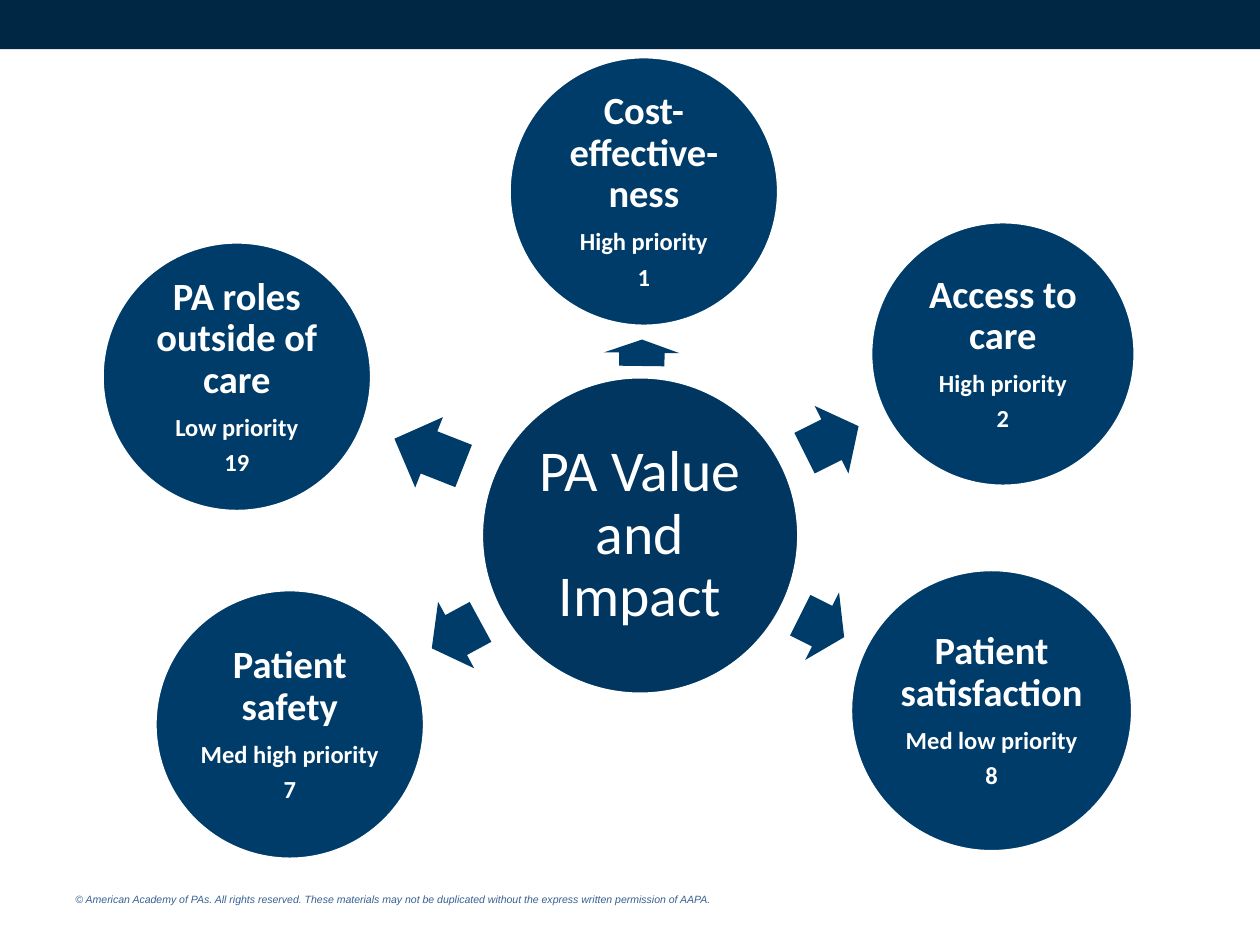
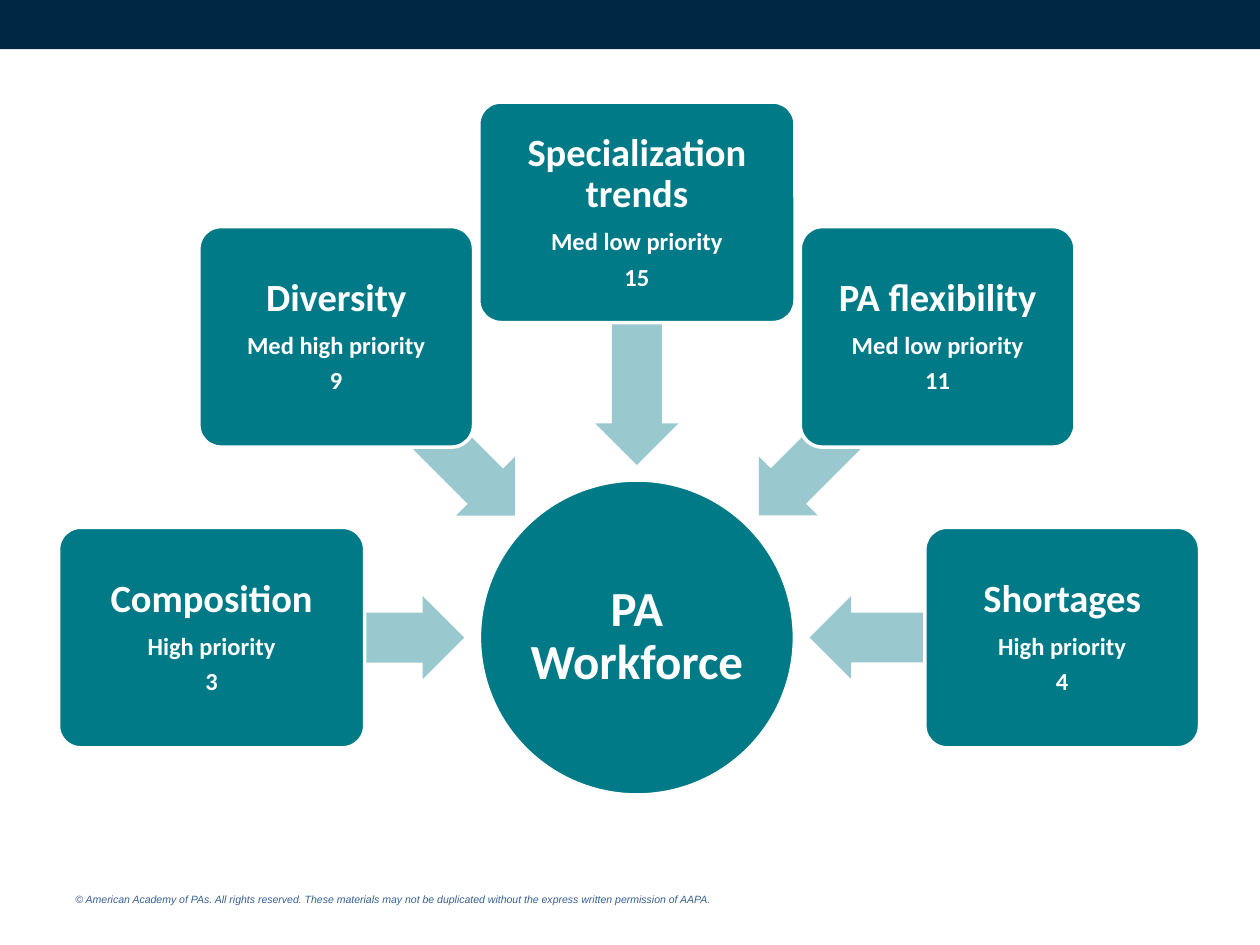
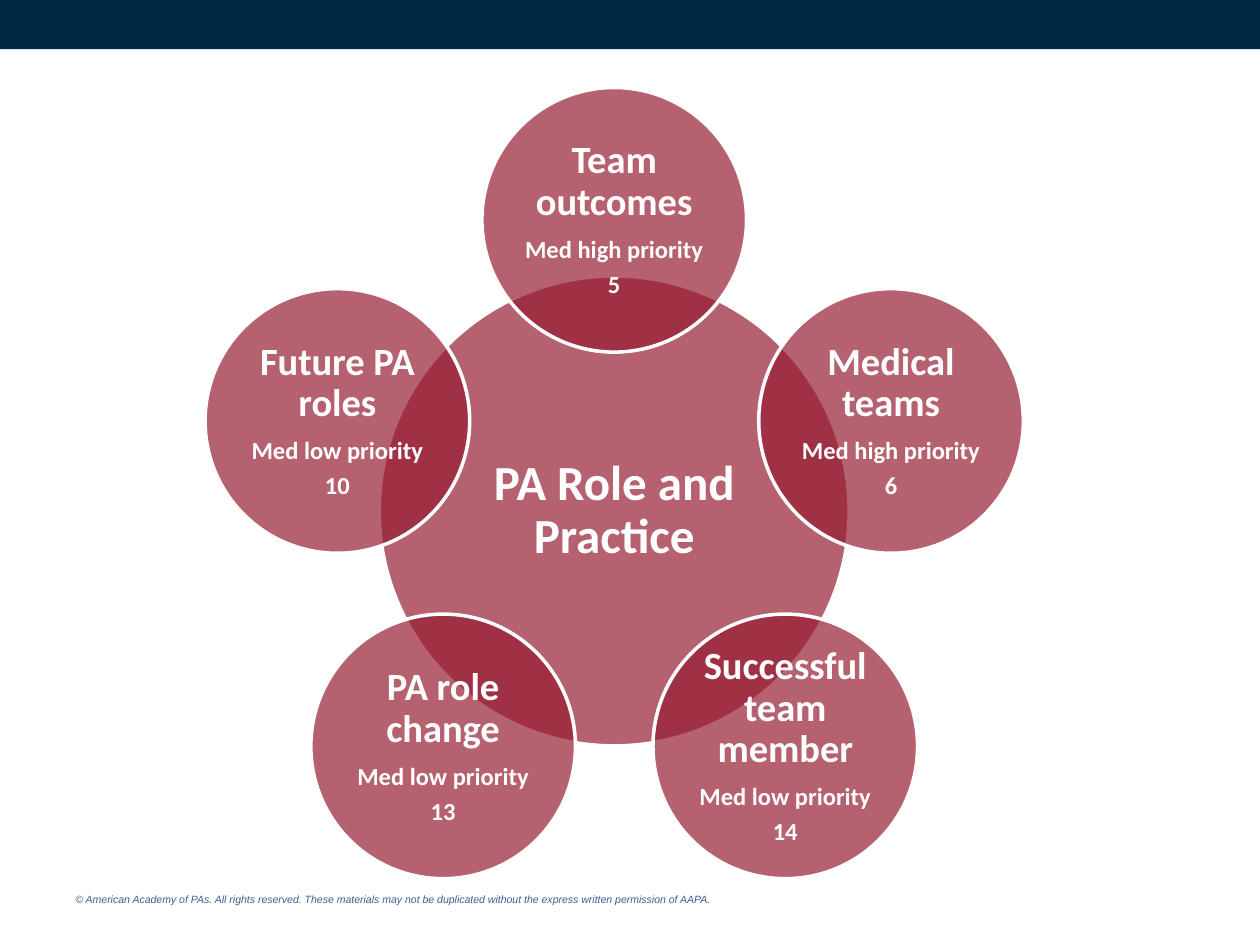
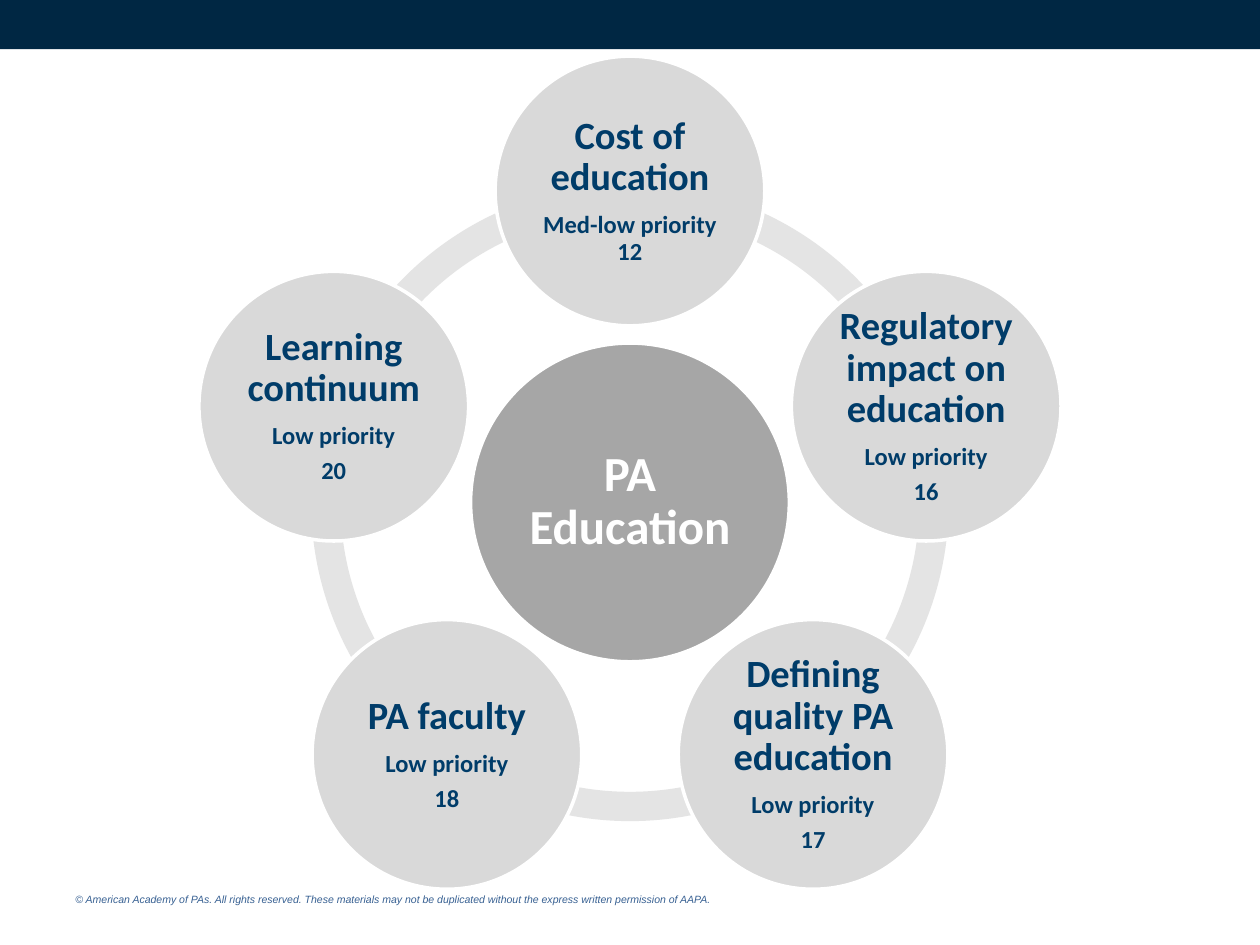
import math

from lxml import etree
from pptx import Presentation
from pptx.dml.color import RGBColor
from pptx.enum import shapes, text
from pptx.oxml import ns
from pptx.util import Inches, Pt

COLORS = {
    "band": "002743",
    "footer": "376092",
    "white": "FFFFFF",
    "navy": "003C69",
    "deep navy": "00365F",
    "teal": "007A87",
    "crimson": "981E32",
    "grey": "A6A6A6",
    "silver": "D9D9D9",
}
COLUMNS = 100  # grid columns across the slide; rows have the same size
FOOTER = (
    "© American Academy of PAs. All rights reserved. These materials may not "
    "be duplicated without the express written permission of AAPA."
)
KIND = shapes.MSO_SHAPE
PENTAGON_ANGLES = [72 * step for step in range(5)]


def color(name):
    return RGBColor.from_string(COLORS[name])


def around(center, radius, angle):
    """Point on a circle, with the angle in degrees clockwise from the top."""
    turn = math.radians(angle)
    return (center[0] + radius * math.sin(turn),
            center[1] - radius * math.cos(turn))


def write(paragraph, words, size, ink, font="Calibri", bold=False,
          italic=False, align=None, line=None, after=None):
    span = paragraph.add_run()
    span.text = words
    span.font.name = font
    span.font.size = Pt(size)
    span.font.bold = bold
    span.font.italic = italic
    span.font.color.rgb = color(ink)
    paragraph.alignment = align
    paragraph.line_spacing = line
    if after is not None:
        paragraph.space_after = Pt(after)


class Deck:
    def __init__(self):
        self.file = Presentation()
        self.file.slide_width = Inches(10)
        self.file.slide_height = Inches(7.5)
        self.unit = self.file.slide_width / COLUMNS
        self.page = None

    def grid(self, *lengths):
        return [round(length * self.unit) for length in lengths]

    def add_page(self):
        """Start a slide with the top band and the copyright footer."""
        self.page = self.file.slides.add_slide(self.file.slide_layouts[6])
        self.add_shape(KIND.RECTANGLE, (50, 1.95), 100, 3.9, "band")
        box = self.page.shapes.add_textbox(*self.grid(5, 70.4, 57.1, 2))
        box.text_frame.word_wrap = True
        box.text_frame.auto_size = text.MSO_AUTO_SIZE.SHAPE_TO_FIT_TEXT
        write(box.text_frame.paragraphs[0], FOOTER, 6, "footer",
              font="Arial", italic=True)

    def add_shape(self, kind, center, width, height, fill, opacity=100,
                  outlined=False, adjust=(), rotation=0):
        left, top = center[0] - width / 2, center[1] - height / 2
        shape = self.page.shapes.add_shape(
            kind, *self.grid(left, top, width, height))
        shape.shadow.inherit = False
        shape.rotation = rotation
        for index, value in enumerate(adjust):
            shape.adjustments[index] = value
        shape.fill.solid()
        shape.fill.fore_color.rgb = color(fill)
        if opacity < 100:
            tint = shape.fill._xPr.find(".//" + ns.qn("a:srgbClr"))
            etree.SubElement(tint, ns.qn("a:alpha"), val=str(opacity * 1000))
        if outlined:
            shape.line.color.rgb = color("white")
            shape.line.width = Pt(2)
        else:
            shape.line.fill.background()
        return shape

    def add_label(self, shape, lines, sizes, ink, bold, inset):
        """Centre the lines in the shape, one paragraph and size each."""
        frame = shape.text_frame
        frame.word_wrap = True
        frame.vertical_anchor = text.MSO_ANCHOR.MIDDLE
        frame.margin_left = frame.margin_right = Inches(inset)
        frame.margin_top = frame.margin_bottom = Inches(inset)
        for index, (words, size) in enumerate(zip(lines, sizes)):
            paragraph = frame.add_paragraph() if index else frame.paragraphs[0]
            write(paragraph, words, size, ink, bold=bold,
                  align=text.PP_ALIGN.CENTER, line=0.9, after=0.35 * size)

    def add_hub(self, title, center, diameter, fill, size=28, bold=True,
                opacity=100):
        disc = self.add_shape(KIND.OVAL, center, diameter, diameter, fill,
                              opacity, outlined=True)
        self.add_label(disc, [title], [size], "white", bold, inset=0.04)

    def add_topic(self, lines, center, width, height, fill, ink="white",
                  opacity=100, kind=KIND.OVAL, adjust=(), inset=0.03):
        """Outlined shape with a topic, its priority and its rank."""
        shape = self.add_shape(kind, center, width, height, fill, opacity,
                               outlined=True, adjust=adjust)
        self.add_label(shape, lines, (22, 14, 14), ink, True, inset)

    def add_arrow(self, kind, center, length, breadth, fill, rotation,
                  opacity=100):
        self.add_shape(kind, center, length, breadth, fill, opacity,
                       adjust=(0.6, 0.5), rotation=rotation)

    def add_arc(self, center, diameter, start, end, fill, opacity):
        """Ring piece between two angles clockwise from the top."""
        # An adjustment of 1 stands for 100000 / 60000 degrees.
        ends = [(angle - 90) % 360 * 0.6 for angle in (start, end)]
        self.add_shape(KIND.BLOCK_ARC, center, diameter, diameter, fill,
                       opacity, adjust=(*ends, 0.046))


def value_and_impact(deck):
    deck.add_page()
    deck.add_hub("PA Value and Impact", (50.8, 42.5), 25.2, "deep navy",
                 size=33, bold=False)
    # topic lines, disc centre, diameter, arrow centre, length, rotation
    spokes = [
        (("Cost-effective-ness", "High priority", "1"),
         (51.1, 15.2), 21.4, (50.95, 28), 2.1, 270.7),
        (("Access to care", "High priority", "2"),
         (79.6, 28.1), 21, (66, 34.9), 4.8, 333.4),
        (("Patient satisfaction", "Med low priority", "8"),
         (78.7, 56.4), 22.4, (65.25, 49.7), 3.9, 26.6),
        (("Patient safety", "Med high priority", "7"),
         (23, 57.5), 21.4, (36.2, 50.4), 4.4, 151.5),
        (("PA roles outside of care", "Low priority", "19"),
         (18.8, 29.9), 21.4, (34.05, 35.9), 5.9, 201.5),
    ]
    for lines, center, diameter, middle, length, rotation in spokes:
        deck.add_arrow(KIND.RIGHT_ARROW, middle, length, 6, "navy", rotation)
        deck.add_topic(lines, center, diameter, diameter, "navy")


def workforce(deck):
    deck.add_page()
    center = (50.55, 50.6)
    deck.add_hub("PA Workforce", center, 25, "teal")
    cards = [
        (("Composition", "High priority", "3"), 24.3),
        (("Diversity", "Med high priority", "9"), 21.8),
        (("Specialization trends", "Med low priority", "15"), 25.1),
        (("PA flexibility", "Med low priority", "11"), 21.8),
        (("Shortages", "High priority", "4"), 21.8),
    ]
    for index, (lines, width) in enumerate(cards):
        angle = 45 * index - 90
        deck.add_arrow(KIND.LEFT_ARROW, around(center, 23.75, angle), 20.1,
                       6.6, "teal", (270 + angle) % 360, opacity=40)
        deck.add_topic(lines, around(center, 33.75, angle), width, 17.5,
                       "teal", kind=KIND.ROUNDED_RECTANGLE, adjust=(0.1,),
                       inset=0.05)


def role_and_practice(deck):
    deck.add_page()
    center = (48.75, 40.55)
    deck.add_hub("PA Role and Practice", center, 37.3, "crimson", opacity=70)
    topics = [
        ("Team outcomes", "Med high priority", "5"),
        ("Medical teams", "Med high priority", "6"),
        ("Successful team member", "Med low priority", "14"),
        ("PA role change", "Med low priority", "13"),
        ("Future PA roles", "Med low priority", "10"),
    ]
    for lines, angle in zip(topics, PENTAGON_ANGLES):
        deck.add_topic(lines, around(center, 23.1, angle), 21, 21, "crimson",
                       opacity=70)


def education(deck):
    deck.add_page()
    center = (50, 39.88)
    for angle in reversed(PENTAGON_ANGLES):
        deck.add_arc(center, 50.6, angle, angle + 72, "silver", opacity=70)
    deck.add_hub("PA Education", center, 25.3, "grey")
    topics = [
        ("Cost of education", "Med-low priority 12"),
        ("Regulatory impact on education", "Low priority", "16"),
        ("Defining quality PA education", "Low priority", "17"),
        ("PA faculty", "Low priority", "18"),
        ("Learning continuum", "Low priority", "20"),
    ]
    for lines, angle in zip(topics, PENTAGON_ANGLES):
        deck.add_topic(lines, around(center, 24.72, angle), 21.4, 21.4,
                       "silver", ink="navy")


def main():
    deck = Deck()
    for build in (value_and_impact, workforce, role_and_practice, education):
        build(deck)
    deck.file.save("out.pptx")


if __name__ == "__main__":
    main()
